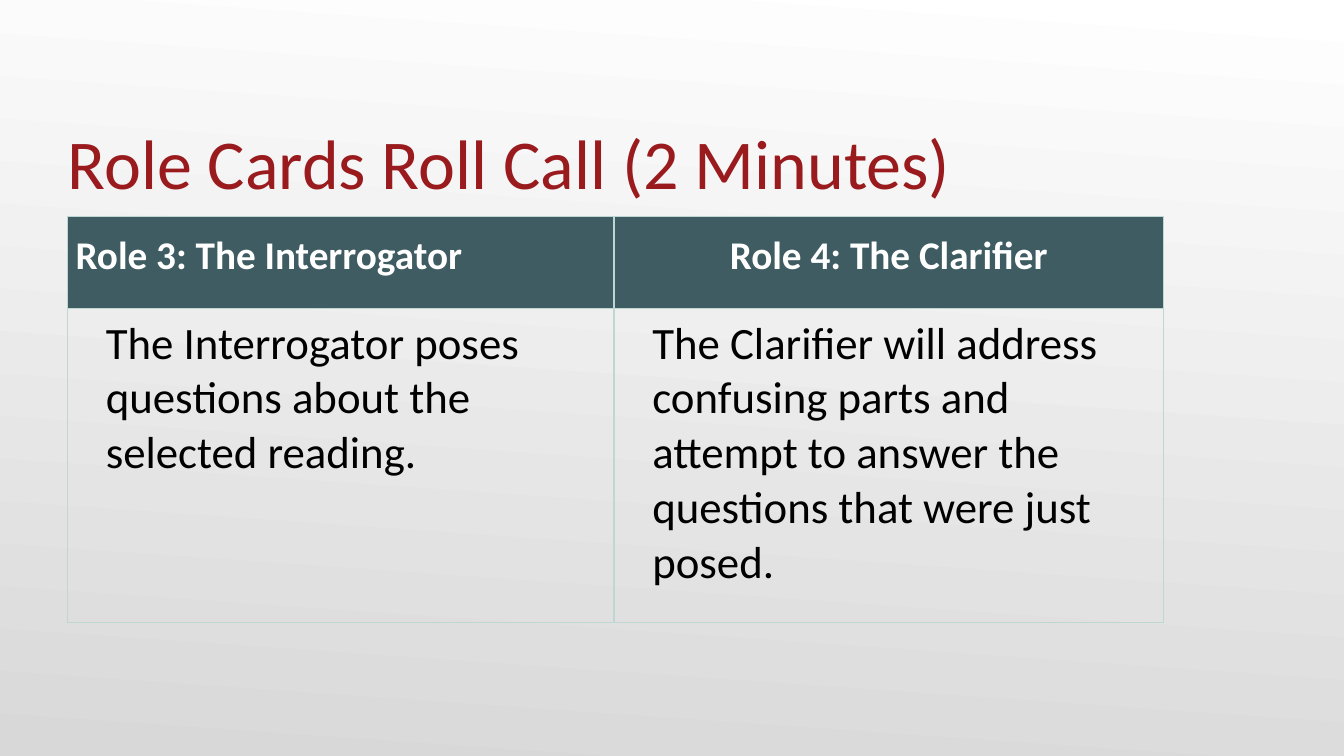
from dataclasses import dataclass

from lxml.etree import SubElement
from pptx import Presentation
from pptx.dml.color import RGBColor as Color
from pptx.enum.text import MSO_ANCHOR as Anchor, PP_ALIGN as Align
from pptx.oxml.ns import qn
from pptx.slide import Slide
from pptx.table import _Cell as Cell
from pptx.text.text import _Paragraph as Paragraph
from pptx.util import Inches, Pt


@dataclass(frozen=True)
class Theme:
    font: str = "Calibri"
    title_size: int = 50
    header_size: int = 28
    body_size: int = 32
    title: str = "991B1E"
    header_text: str = "FFFFFF"
    header_fill: str = "3E5C61"
    body: str = "000000"
    border: str = "BED7D3"
    background: tuple[str, str] = ("FFFFFF", "D8D8D8")


@dataclass(frozen=True)
class Role:
    name: str
    duty: str
    width: float
    header_align: Align


THEME = Theme()
ROLES = [
    Role("Role 3: The Interrogator",
         "The Interrogator poses questions about the selected reading.",
         5.42, Align.LEFT),
    Role("Role 4: The Clarifier",
         "The Clarifier will address confusing parts and attempt to answer "
         "the questions that were just posed.",
         5.45, Align.CENTER),
]
LEFT = 0.67
ROW_HEIGHTS = (0.91, 3.12)


def style(para: Paragraph, size: int, color: str, bold: bool = False) -> None:
    para.font.name = THEME.font
    para.font.size = Pt(size)
    para.font.bold = bold
    para.font.color.rgb = Color.from_string(color)


def paint_background(page: Slide) -> None:
    fill = page.background.fill
    fill.gradient()
    fill.gradient_angle = 266
    for stop, color in zip(fill.gradient_stops, THEME.background):
        stop.color.rgb = Color.from_string(color)


def add_title(page: Slide, text: str) -> None:
    box = page.shapes.add_textbox(Inches(LEFT), Inches(0.77), Inches(12), Inches(1.25))
    frame = box.text_frame
    frame.word_wrap = True
    frame.vertical_anchor = Anchor.BOTTOM
    frame.margin_left = frame.margin_right = frame.margin_bottom = 0
    frame.margin_top = Inches(0.05)
    frame.text = text
    style(frame.paragraphs[0], THEME.title_size, THEME.title)


def prepare_cell(cell: Cell, text: str) -> Paragraph:
    cell.margin_left = cell.margin_right = Inches(0.08)
    cell.margin_top = cell.margin_bottom = Inches(0.08)
    properties = cell._tc.get_or_add_tcPr()
    for side in ("L", "R", "T", "B"):
        line = SubElement(properties, qn(f"a:ln{side}"), w=str(Pt(1)))
        solid = SubElement(line, qn("a:solidFill"))
        SubElement(solid, qn("a:srgbClr"), val=THEME.border)
    cell.text = text
    return cell.text_frame.paragraphs[0]


def fill_header(cell: Cell, role: Role) -> None:
    para = prepare_cell(cell, role.name)
    para.alignment = role.header_align
    para.line_spacing = 1.15
    style(para, THEME.header_size, THEME.header_text, bold=True)
    cell.fill.solid()
    cell.fill.fore_color.rgb = Color.from_string(THEME.header_fill)


def fill_duty(cell: Cell, role: Role) -> None:
    para = prepare_cell(cell, role.duty)
    indent = para._p.get_or_add_pPr()
    indent.set("marL", str(Inches(0.3)))
    indent.set("indent", "0")
    style(para, THEME.body_size, THEME.body)
    cell.fill.background()


def add_roles(page: Slide) -> None:
    width = sum(role.width for role in ROLES)
    table = page.shapes.add_table(
        len(ROW_HEIGHTS), len(ROLES), Inches(LEFT), Inches(2.15),
        Inches(width), Inches(sum(ROW_HEIGHTS))).table
    table.horz_banding = False
    for row, height in zip(table.rows, ROW_HEIGHTS):
        row.height = Inches(height)
    for index, role in enumerate(ROLES):
        table.columns[index].width = Inches(role.width)
        fill_header(table.cell(0, index), role)
        fill_duty(table.cell(1, index), role)


def main() -> None:
    deck = Presentation()
    deck.slide_width, deck.slide_height = Inches(13.33), Inches(7.5)
    page = deck.slides.add_slide(deck.slide_layouts[6])
    paint_background(page)
    add_title(page, "Role Cards Roll Call (2 Minutes)")
    add_roles(page)
    deck.save("out.pptx")


if __name__ == "__main__":
    main()
